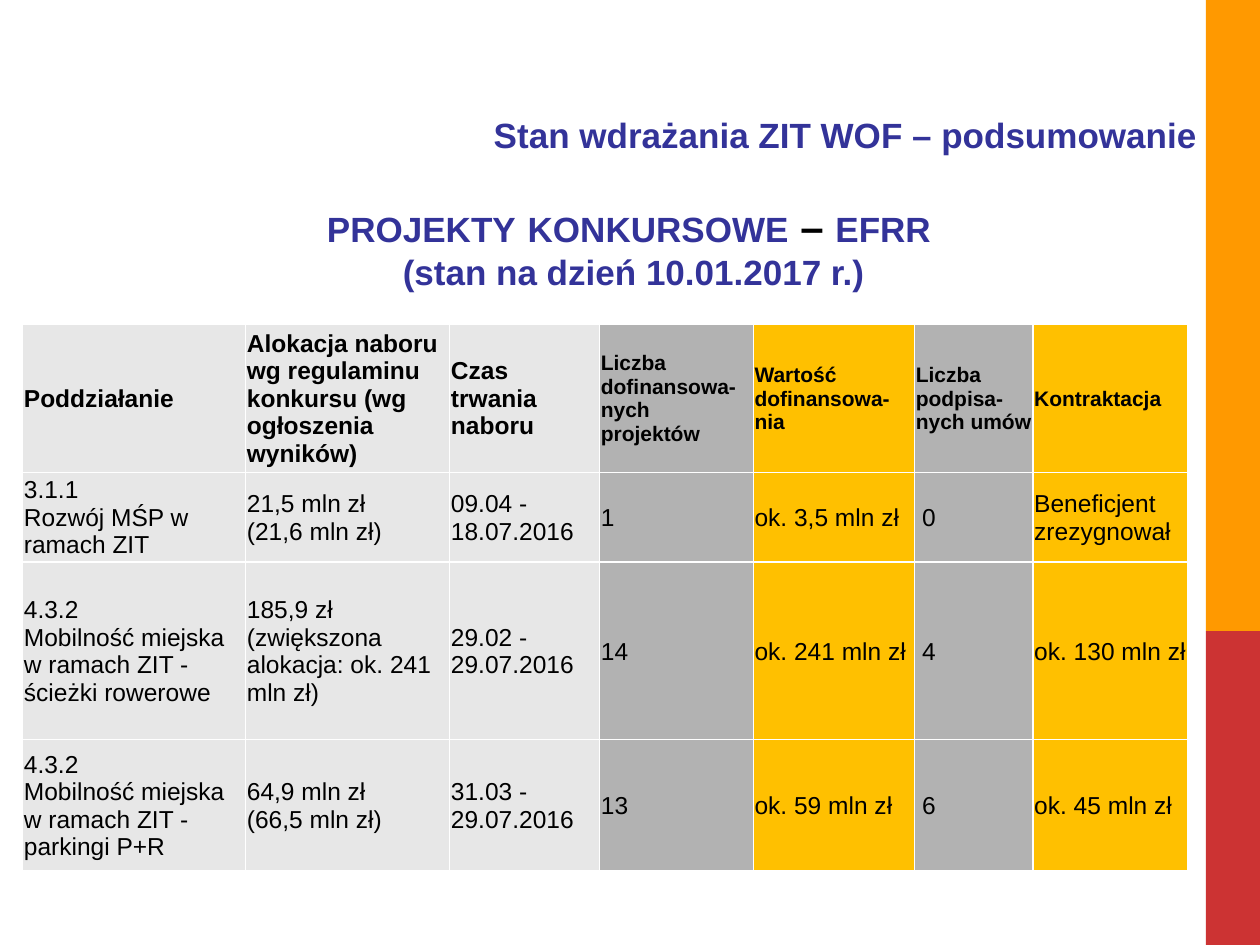
from copy import deepcopy

from pptx import Presentation
from pptx.dml.color import RGBColor
from pptx.enum.shapes import MSO_SHAPE
from pptx.enum.text import MSO_ANCHOR, MSO_AUTO_SIZE, PP_ALIGN
from pptx.oxml import parse_xml
from pptx.oxml.ns import nsdecls, qn
from pptx.util import Inches, Pt

ORANGE = RGBColor(0xFF, 0x99, 0x00)
RED = RGBColor(0xCC, 0x33, 0x33)
NAVY = RGBColor(0x33, 0x33, 0x99)
BLACK = RGBColor(0, 0, 0)
LIGHT = RGBColor(0xE7, 0xE7, 0xE7)
GRAY = RGBColor(0xB2, 0xB2, 0xB2)
GOLD = RGBColor(0xFF, 0xC0, 0x00)

COL_WIDTHS = [1.77, 1.62, 1.19, 1.22, 1.28, 0.94, 1.23]
COL_FILLS = [LIGHT, LIGHT, LIGHT, GRAY, GOLD, GRAY, GOLD]
HEADER_SIZES = [14, 14, 14, 12, 12, 12, 12]
AGREEMENTS_COL = 5
ROW_HEIGHTS = [1.18, 0.71, 1.41, 1.04]

# "\n" starts a paragraph, "\v" breaks a line
ROWS = [
    ["Poddziałanie",
     "Alokacja naboru\nwg regulaminu konkursu (wg ogłoszenia wyników)",
     "Czas trwania naboru", "Liczba dofinansowa-nych projektów",
     "Wartość dofinansowa-nia", "Liczba podpisa-nych umów", "Kontraktacja"],
    ["3.1.1\vRozwój MŚP w ramach ZIT", "21,5 mln zł\n(21,6 mln zł)",
     "09.04 - 18.07.2016", "1", "ok. 3,5 mln zł", "0",
     "Beneficjent zrezygnował"],
    ["4.3.2\vMobilność miejska w ramach ZIT - ścieżki rowerowe",
     "185,9 zł\n(zwiększona alokacja: ok. 241 mln zł)",
     "29.02 - 29.07.2016", "14", "ok. 241 mln zł", "4", "ok. 130 mln zł"],
    ["4.3.2\vMobilność miejska w ramach ZIT - parkingi P+R",
     "64,9 mln zł\n(66,5 mln zł)",
     "31.03 - 29.07.2016", "13", "ok. 59 mln zł", "6", "ok. 45 mln zł"],
]


def add_text(p, text, size=14, color=BLACK, bold=False, font="Arial"):
    """Append text to a paragraph; line breaks take the same format."""
    for i, line in enumerate(text.split("\v")):
        if i:
            p.add_line_break()
        r = p.add_run()
        r.text = line
        r.font.name, r.font.size, r.font.bold = font, Pt(size), bold
        r.font.color.rgb = color
        if i:
            r._r.getprevious().append(deepcopy(r._r.find(qn("a:rPr"))))


def add_bar(slide, top, height, color):
    sp = slide.shapes.add_shape(MSO_SHAPE.RECTANGLE, Inches(9.57), Inches(top),
                                Inches(0.43), Inches(height))
    sp.shadow.inherit = False
    sp.fill.solid()
    sp.fill.fore_color.rgb = color
    sp.line.fill.background()


def centre_frame(sp):
    """Prepare a one-paragraph, unwrapped, centred frame."""
    tf = sp.text_frame
    tf.word_wrap = False
    tf.auto_size = MSO_AUTO_SIZE.SHAPE_TO_FIT_TEXT
    tf.vertical_anchor = MSO_ANCHOR.TOP
    p = tf.paragraphs[0]
    p.alignment = PP_ALIGN.CENTER
    return p


def add_title(slide):
    sp = slide.shapes.title
    sp.left, sp.top = Inches(3.8), Inches(0.85)
    sp.width, sp.height = Inches(5.82), Inches(0.44)
    add_text(centre_frame(sp), "Stan wdrażania ZIT WOF – podsumowanie",
             size=20, color=NAVY, bold=True)


def add_subtitle(slide):
    sp = slide.shapes.add_textbox(Inches(2.47), Inches(1.54),
                                  Inches(5.12), Inches(0.84))
    p = centre_frame(sp)
    for text, size, color in [
            ("PROJEKTY", 20, NAVY), (" ", 24, BLACK),
            ("KONKURSOWE", 20, NAVY), (" – ", 24, BLACK),
            ("EFRR \v(stan na dzień 10.01.2017 r.)", 20, NAVY)]:
        add_text(p, text, size=size, color=color, bold=True)


def format_cell(cell, fill, left):
    cell.vertical_anchor = MSO_ANCHOR.MIDDLE
    cell.margin_left = Inches(left)
    cell.margin_top = cell.margin_right = Inches(0.01)
    cell.margin_bottom = 0
    # White borders come before the fill in the cell properties
    tcPr = cell._tc.get_or_add_tcPr()
    for side in "LRTB":
        tcPr.append(parse_xml(
            f'<a:ln{side} {nsdecls("a")} w="12700"><a:solidFill>'
            f'<a:srgbClr val="FFFFFF"/></a:solidFill></a:ln{side}>'))
    cell.fill.solid()
    cell.fill.fore_color.rgb = fill


def add_calls_table(slide):
    table = slide.shapes.add_table(
        len(ROWS), len(COL_WIDTHS), Inches(0.18), Inches(2.57),
        Inches(sum(COL_WIDTHS)), Inches(sum(ROW_HEIGHTS))).table
    table.first_row = table.horz_banding = False
    for col, width in zip(table.columns, COL_WIDTHS):
        col.width = Inches(width)
    for row, height in zip(table.rows, ROW_HEIGHTS):
        row.height = Inches(height)
    for i, texts in enumerate(ROWS):
        header = i == 0
        for j, text in enumerate(texts):
            cell = table.cell(i, j)
            indented = j == AGREEMENTS_COL and not header
            format_cell(cell, COL_FILLS[j], 0.06 if indented else 0.01)
            tf = cell.text_frame
            for k, part in enumerate(text.split("\n")):
                p = tf.add_paragraph() if k else tf.paragraphs[0]
                add_text(p, part, size=HEADER_SIZES[j] if header else 14,
                         bold=header)


def main():
    prs = Presentation()
    prs.slide_width, prs.slide_height = Inches(10), Inches(7.5)
    slide = prs.slides.add_slide(prs.slide_layouts[5])

    # Side bars
    add_bar(slide, 0, 5.01, ORANGE)
    add_bar(slide, 5.01, 2.49, RED)

    # Headings and table
    add_title(slide)
    add_subtitle(slide)
    add_calls_table(slide)

    prs.save("out.pptx")


if __name__ == "__main__":
    main()
